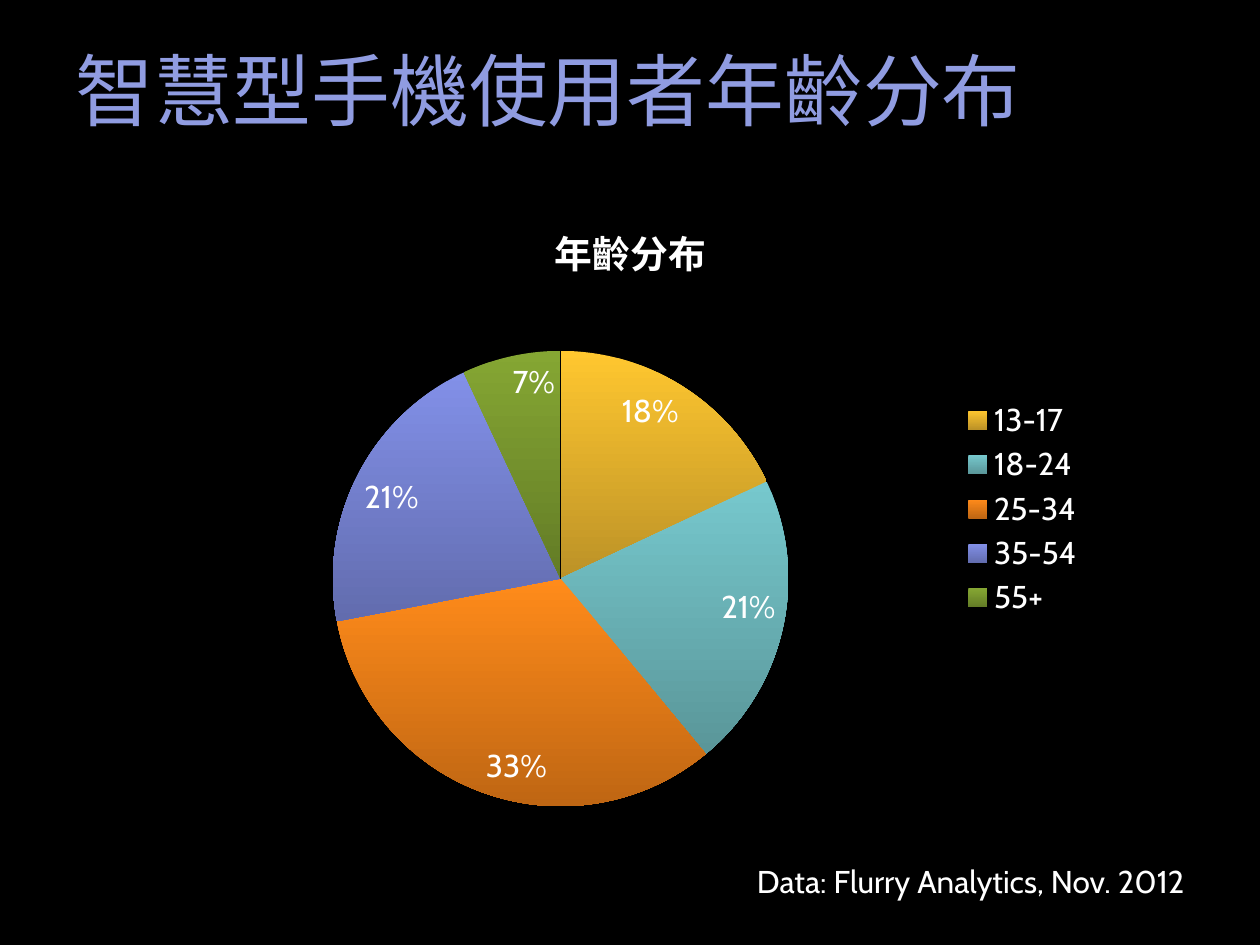
"""Build a slide with a pie chart of smartphone users by age."""
from dataclasses import dataclass

from lxml import etree
from pptx import Presentation
from pptx.chart.data import CategoryChartData
from pptx.dml.color import RGBColor
from pptx.enum.chart import XL_CHART_TYPE, XL_LABEL_POSITION, XL_LEGEND_POSITION
from pptx.enum.text import MSO_ANCHOR, PP_ALIGN
from pptx.oxml import parse_xml
from pptx.oxml.ns import nsdecls, qn
from pptx.util import Inches, Pt

PIE = XL_CHART_TYPE.PIE
INSIDE_END = XL_LABEL_POSITION.INSIDE_END
LEGEND_RIGHT = XL_LEGEND_POSITION.RIGHT
MIDDLE = MSO_ANCHOR.MIDDLE
LEFT, RIGHT = PP_ALIGN.LEFT, PP_ALIGN.RIGHT
WHITE = "FFFFFF"
CHART_TITLE = "年齡分布"


@dataclass
class Label:
    text: str
    left: float
    top: float
    width: float
    height: float
    size: float
    font: str
    color: str
    align: PP_ALIGN


@dataclass
class AgeGroup:
    name: str
    percent: int
    light: str
    dark: str


LABELS = [
    Label("智慧型手機使用者年齡分布", 0.5, 0.31, 9, 0.8, 45, "Arial", "909CE1", LEFT),
    Label("Data: Flurry Analytics, Nov. 2012", 5.71, 6.79, 3.79, 0.4, 18, "Cabin", WHITE, RIGHT),
]
AGE_GROUPS = [
    AgeGroup("13-17", 18, "FFC72F", "BC9227"),
    AgeGroup("18-24", 21, "76C8CD", "5A9699"),
    AgeGroup("25-34", 33, "FF8B1A", "BF6613"),
    AgeGroup("35-54", 21, "8290E8", "626CAE"),
    AgeGroup("55+", 7, "85A633", "637C26"),
]


def rgb(color: str) -> RGBColor:
    """Turn a hex string into a colour."""
    return RGBColor.from_string(color)


def style_font(font, size: float, name: str, color: str, bold: bool = False) -> None:
    """Set the face, size, weight and colour of a font."""
    font.size, font.name, font.bold = Pt(size), name, bold
    font.color.rgb = rgb(color)


def add_label(s, label: Label) -> None:
    """Add one line of text."""
    tf = s.shapes.add_textbox(Inches(label.left), Inches(label.top),
                              Inches(label.width), Inches(label.height)).text_frame
    tf.word_wrap = True
    tf.vertical_anchor = MIDDLE
    tf.text = label.text
    p = tf.paragraphs[0]
    p.alignment = label.align
    style_font(p.runs[0].font, label.size, label.font, label.color)


def place_plot(chart, x: float, y: float, w: float, h: float) -> None:
    """Fix the inner plot area as fractions of the chart."""
    area = chart.plots[0]._element.getparent()
    for old in area.findall(qn("c:layout")):
        area.remove(old)
    layout = parse_xml(f"<c:layout {nsdecls('c')}><c:manualLayout/></c:layout>")
    values = {"layoutTarget": "inner", "xMode": "edge", "yMode": "edge",
              "x": x, "y": y, "w": w, "h": h}
    for tag, value in values.items():
        etree.SubElement(layout[0], qn(f"c:{tag}")).set("val", str(value))
    area.insert(0, layout)


def add_pie(s, groups: list[AgeGroup]) -> None:
    """Add the pie chart with its title, legend and percentages."""
    data = CategoryChartData()
    data.categories = [group.name for group in groups]
    data.add_series(CHART_TITLE, [group.percent for group in groups])
    chart = s.shapes.add_chart(PIE, Inches(1.3), Inches(1.53),
                               Inches(7.41), Inches(5.02), data).chart
    style_font(chart.font, 18, "Cabin", WHITE)
    tf = chart.chart_title.text_frame
    tf.text = CHART_TITLE
    style_font(tf.paragraphs[0].runs[0].font, 21.6, "Cabin", WHITE, bold=True)
    chart.chart_title.include_in_layout = False
    chart.has_legend = True
    chart.legend.position = LEGEND_RIGHT
    chart.legend.include_in_layout = False
    style_font(chart.legend.font, 18, "Cabin", WHITE)

    plot = chart.plots[0]
    plot.vary_by_categories = True
    plot.has_data_labels = True
    labels = plot.data_labels
    labels.show_percentage, labels.show_value = True, False
    labels.number_format, labels.number_format_is_linked = "0%", False
    labels.position = INSIDE_END
    style_font(labels.font, 18, "Cabin", WHITE)
    for i, group in enumerate(groups):
        fill = plot.series[0].points[i].format.fill
        fill.gradient()
        fill.gradient_angle = 270
        for stop, color in zip(fill.gradient_stops, (group.light, group.dark)):
            stop.color.rgb = rgb(color)
    place_plot(chart, 0.18, 0.25, 0.49, 0.72)


def main() -> None:
    """Build and save the slide."""
    prs = Presentation()
    prs.slide_width, prs.slide_height = Inches(10), Inches(7.5)
    s = prs.slides.add_slide(prs.slide_layouts[6])
    s.background.fill.solid()
    s.background.fill.fore_color.rgb = rgb("000000")
    for label in LABELS:
        add_label(s, label)
    add_pie(s, AGE_GROUPS)
    prs.save("out.pptx")


if __name__ == "__main__":
    main()
